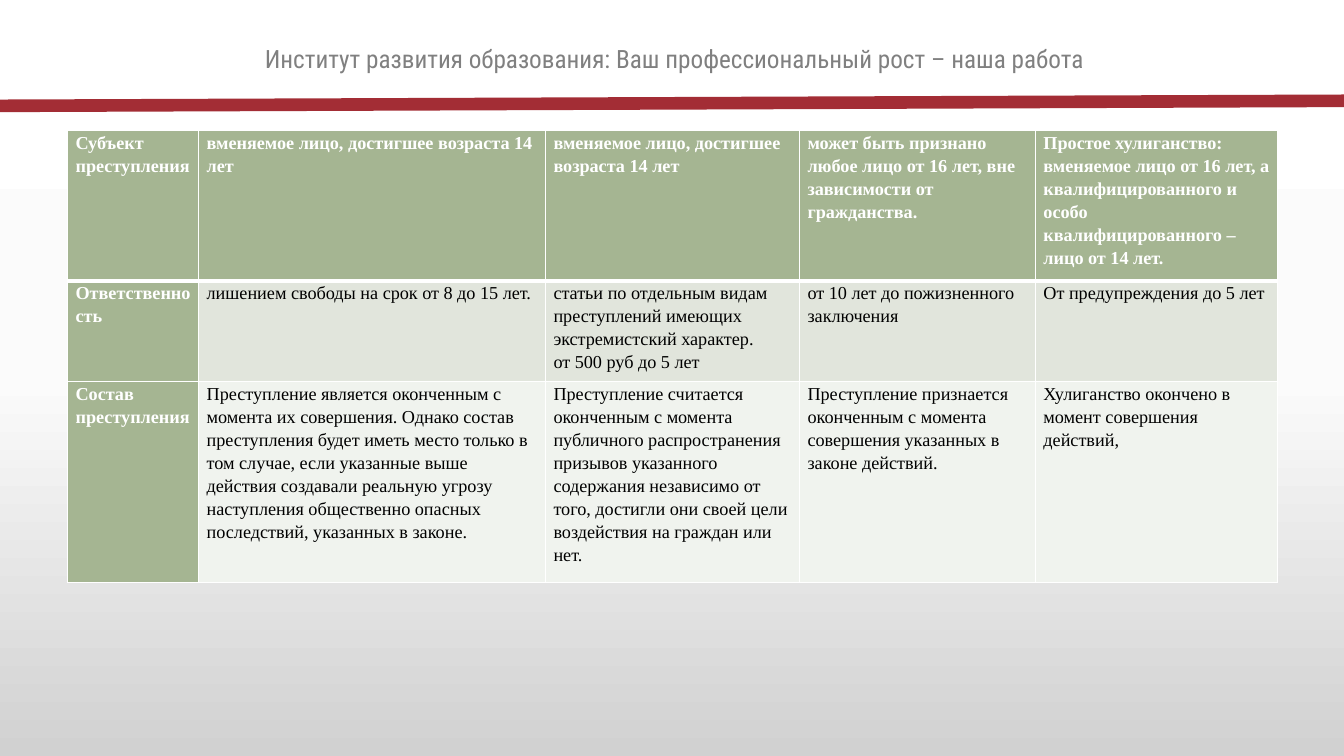
from copy import deepcopy
from dataclasses import dataclass

from lxml.etree import SubElement
from pptx import Presentation
from pptx.dml.color import RGBColor
from pptx.enum.shapes import MSO_CONNECTOR
from pptx.enum.text import MSO_AUTO_SIZE, PP_ALIGN
from pptx.oxml.ns import qn
from pptx.util import Inches, Pt

SLIDE_WIDTH, SLIDE_HEIGHT = 13.33, 7.5


@dataclass(frozen=True)
class Theme:
    background: tuple = ((0, "FFFFFF"), (0.5, "FBFBFB"), (1, "D1D1D1"))
    stripe: str = "A32D35"
    title: str = "808080"
    heading_fill: str = "A5B592"
    body_fills: tuple = ("E1E5DC", "F0F3EE")
    heading_text: str = "FFFFFF"
    body_text: str = "000000"
    border: str = "FFFFFF"
    title_font: str = "Roboto Condensed"
    table_font: str = "Times New Roman"
    title_size: float = 18
    table_size: float = 13
    stripe_width: float = 9
    border_width: float = 1
    heading_border_width: float = 3


THEME = Theme()

TITLE = "Институт развития образования: Ваш профессиональный рост – наша работа"
COLUMN_WIDTHS = (1.3, 3.44, 2.52, 2.34, 2.4)
ROW_HEIGHTS = (0.97, 0.78, 1.94)
CRIMES = (
    (
        "Субъект преступления",
        "вменяемое лицо, достигшее возраста 14 лет",
        "вменяемое лицо, достигшее возраста 14 лет",
        "может быть признано любое лицо от 16 лет, вне зависимости от гражданства.",
        "Простое хулиганство: вменяемое лицо от 16 лет, а квалифицированного и "
        "особо квалифицированного – лицо от 14 лет.",
    ),
    (
        "Ответственность",
        "лишением свободы на срок от 8 до 15 лет.",
        "статьи по отдельным видам преступлений имеющих экстремистский характер.\n"
        "от 500 руб до 5 лет",
        "от 10 лет до пожизненного заключения",
        "От предупреждения до 5 лет",
    ),
    (
        "Состав преступления",
        "Преступление является оконченным с момента их совершения. Однако состав "
        "преступления будет иметь место только в том случае, если указанные выше "
        "действия создавали реальную угрозу наступления общественно опасных "
        "последствий, указанных в законе.",
        "Преступление считается оконченным с момента публичного распространения "
        "призывов указанного содержания независимо от того, достигли они своей "
        "цели воздействия на граждан или нет.",
        "Преступление признается оконченным с момента совершения указанных в "
        "законе действий.",
        "Хулиганство окончено в момент совершения действий,",
    ),
)


def color(value):
    return RGBColor.from_string(value)


def add_run(paragraph, text, font, size, text_color, bold=False):
    run = paragraph.add_run()
    run.text = text
    run.font.name = font
    run.font.size = Pt(size)
    run.font.bold = bold
    run.font.color.rgb = color(text_color)


def paint_background(slide):
    fill = slide.background.fill
    fill.gradient()
    fill.gradient_angle = 270
    stop_list = slide.element.xpath(".//p:bg//a:gsLst")[0]
    stop_list.insert(1, deepcopy(stop_list[0]))
    for stop, (position, value) in zip(fill.gradient_stops, THEME.background):
        stop.position = position
        stop.color.rgb = color(value)


def add_stripe(slide, left, top, width, height):
    """Draw the stripe from the lower left to the upper right of its box."""
    stripe = slide.shapes.add_connector(
        MSO_CONNECTOR.STRAIGHT,
        Inches(left), Inches(top + height), Inches(left + width), Inches(top),
    )
    stripe.line.color.rgb = color(THEME.stripe)
    stripe.line.width = Pt(THEME.stripe_width)
    SubElement(stripe.element.spPr, qn("a:effectLst"))


def add_title(slide, left, top, width, height):
    box = slide.shapes.add_textbox(*map(Inches, (left, top, width, height)))
    frame = box.text_frame
    frame.word_wrap = True
    frame.auto_size = MSO_AUTO_SIZE.SHAPE_TO_FIT_TEXT
    paragraph = frame.paragraphs[0]
    paragraph.alignment = PP_ALIGN.CENTER
    add_run(paragraph, TITLE, THEME.title_font, THEME.title_size, THEME.title)


def set_borders(cell, top_width, bottom_width):
    properties = cell._tc.get_or_add_tcPr()
    widths = {"lnL": THEME.border_width, "lnR": THEME.border_width,
              "lnT": top_width, "lnB": bottom_width}
    for side, width in widths.items():
        line = SubElement(properties, qn(f"a:{side}"), w=str(Pt(width)))
        line_fill = SubElement(line, qn("a:solidFill"))
        SubElement(line_fill, qn("a:srgbClr"), val=THEME.border)


def fill_cell(cell, text, fill_color, text_color, bold):
    cell.margin_left = cell.margin_right = Inches(0.08)
    cell.margin_top = cell.margin_bottom = 0
    cell.fill.solid()
    cell.fill.fore_color.rgb = color(fill_color)
    frame = cell.text_frame
    for index, line in enumerate(text.split("\n")):
        paragraph = frame.add_paragraph() if index else frame.paragraphs[0]
        paragraph.line_spacing = 1.15
        add_run(paragraph, line, THEME.table_font, THEME.table_size, text_color, bold)


def add_crime_table(slide, left, top, width, height):
    """Rows grow with their text; the frame keeps the height of the box."""
    frame = slide.shapes.add_table(
        len(ROW_HEIGHTS), len(COLUMN_WIDTHS),
        *map(Inches, (left, top, width, height)),
    )
    table = frame.table
    table.first_row = table.horz_banding = False
    for column, share in zip(table.columns, COLUMN_WIDTHS):
        column.width = Inches(width * share / sum(COLUMN_WIDTHS))
    for row, row_height in zip(table.rows, ROW_HEIGHTS):
        row.height = Inches(row_height)
    frame.height = Inches(height)

    thin, thick = THEME.border_width, THEME.heading_border_width
    for row_index, texts in enumerate(CRIMES):
        for column_index, text in enumerate(texts):
            cell = table.cell(row_index, column_index)
            set_borders(cell, thick if row_index == 1 else thin,
                        thick if row_index == 0 else thin)
            if row_index == 0 or column_index == 0:
                fill_cell(cell, text, THEME.heading_fill, THEME.heading_text, True)
            else:
                fill_cell(cell, text, THEME.body_fills[row_index - 1],
                          THEME.body_text, False)


def main():
    presentation = Presentation()
    presentation.slide_width = Inches(SLIDE_WIDTH)
    presentation.slide_height = Inches(SLIDE_HEIGHT)
    slide = presentation.slides.add_slide(presentation.slide_layouts[6])
    paint_background(slide)
    add_stripe(slide, 0, 1, SLIDE_WIDTH, 0.05)
    add_title(slide, 0.47, 0.38, 12.44, 0.4)
    add_crime_table(slide, 0.67, 1.29, sum(COLUMN_WIDTHS), 4.49)
    presentation.save("out.pptx")


if __name__ == "__main__":
    main()
